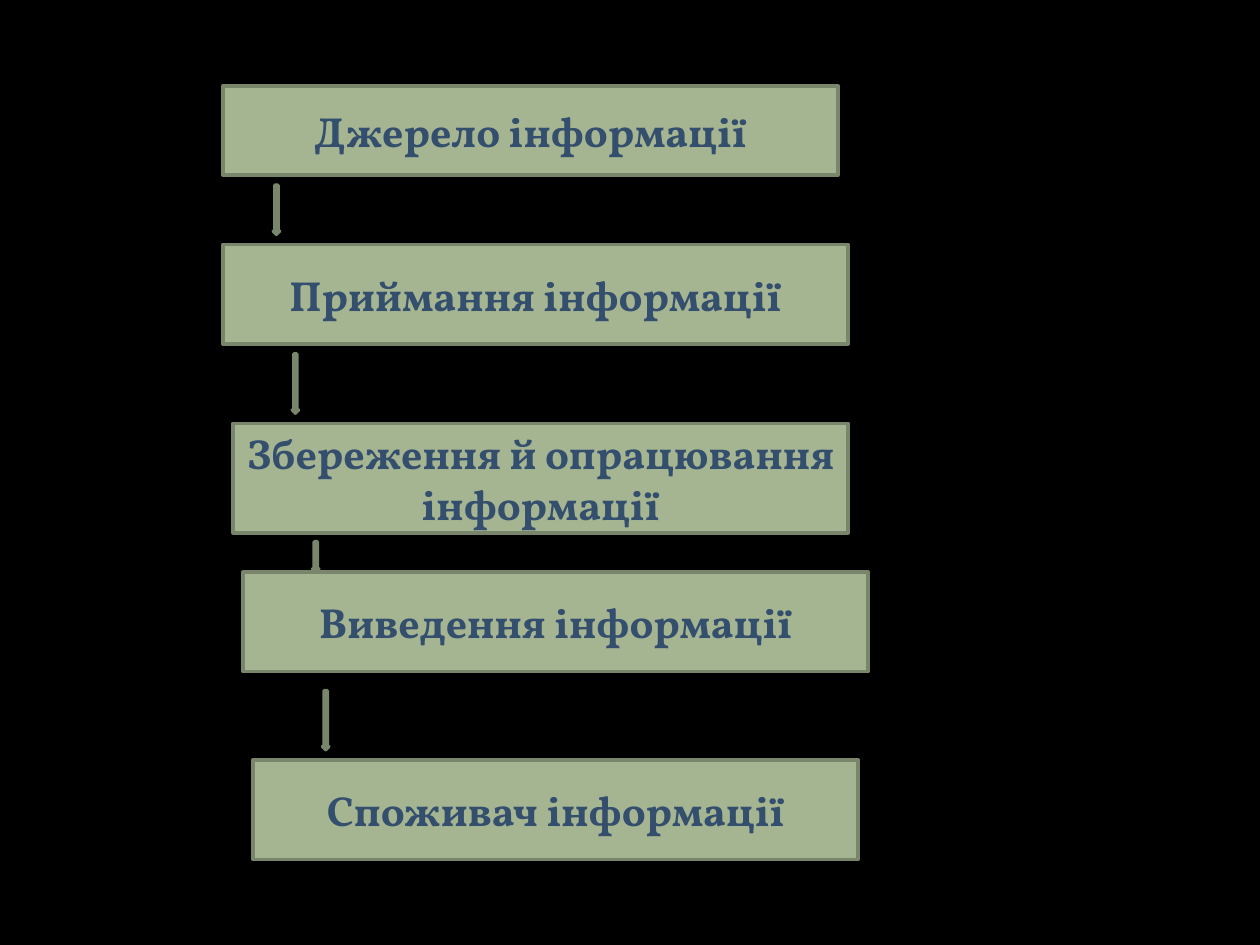
from pptx import Presentation
from pptx.dml.color import RGBColor as RGB
from pptx.enum.shapes import MSO_SHAPE as SHAPE
from pptx.enum.text import MSO_ANCHOR as ANCHOR, PP_ALIGN as ALIGN
from pptx.util import Pt

COLORS = {"background": "000000", "fill": "A5B592", "line": "7A866C", "text": "344E6D"}
TEXT_FORMAT = {"name": "Vollkorn", "size": Pt(24), "bold": True}
ARROW_WIDTH = 3.6

# text, left, top, width, height
STAGES = [
    ("Джерело інформації", 127.4, 49, 351.4, 51.1),
    ("Приймання інформації", 127.4, 139.7, 357.1, 56.9),
    ("Збереження й опрацювання інформації", 133.2, 241.9, 351.4, 62.6),
    ("Виведення інформації", 139, 326.9, 357.1, 56.9),
    ("Споживач інформації", 144.7, 434.2, 345.6, 56.9),
]
# left, top, height
ARROWS = [
    (156.2, 105.8, 28.1),
    (167, 202.3, 33.8),
    (178.6, 309.6, 17.3),
    (184.3, 394.6, 33.8),
]


def color(name):
    return RGB.from_string(COLORS[name])


def add_outlined(s, kind, *box):
    """Add a preset shape in the common fill and outline."""
    sp = s.shapes.add_shape(kind, *map(Pt, box))
    sp.shadow.inherit = False
    sp.fill.solid()
    sp.fill.fore_color.rgb = color("fill")
    sp.line.color.rgb = color("line")
    sp.line.width = Pt(2)
    return sp


def add_stage(s, text, *box):
    tf = add_outlined(s, SHAPE.RECTANGLE, *box).text_frame
    tf.word_wrap = True
    tf.vertical_anchor = ANCHOR.MIDDLE
    p = tf.paragraphs[0]
    p.alignment = ALIGN.CENTER
    r = p.add_run()
    r.text = text
    for key, value in TEXT_FORMAT.items():
        setattr(r.font, key, value)
    r.font.color.rgb = color("text")


def add_arrow(s, left, top, height):
    add_outlined(s, SHAPE.DOWN_ARROW, left, top, ARROW_WIDTH, height)


def main():
    prs = Presentation()
    prs.slide_width, prs.slide_height = Pt(720), Pt(540)
    s = prs.slides.add_slide(prs.slide_layouts[6])
    s.background.fill.solid()
    s.background.fill.fore_color.rgb = color("background")
    for stage in STAGES:
        add_stage(s, *stage)
    for arrow in ARROWS:
        add_arrow(s, *arrow)
    prs.save("out.pptx")


if __name__ == "__main__":
    main()
